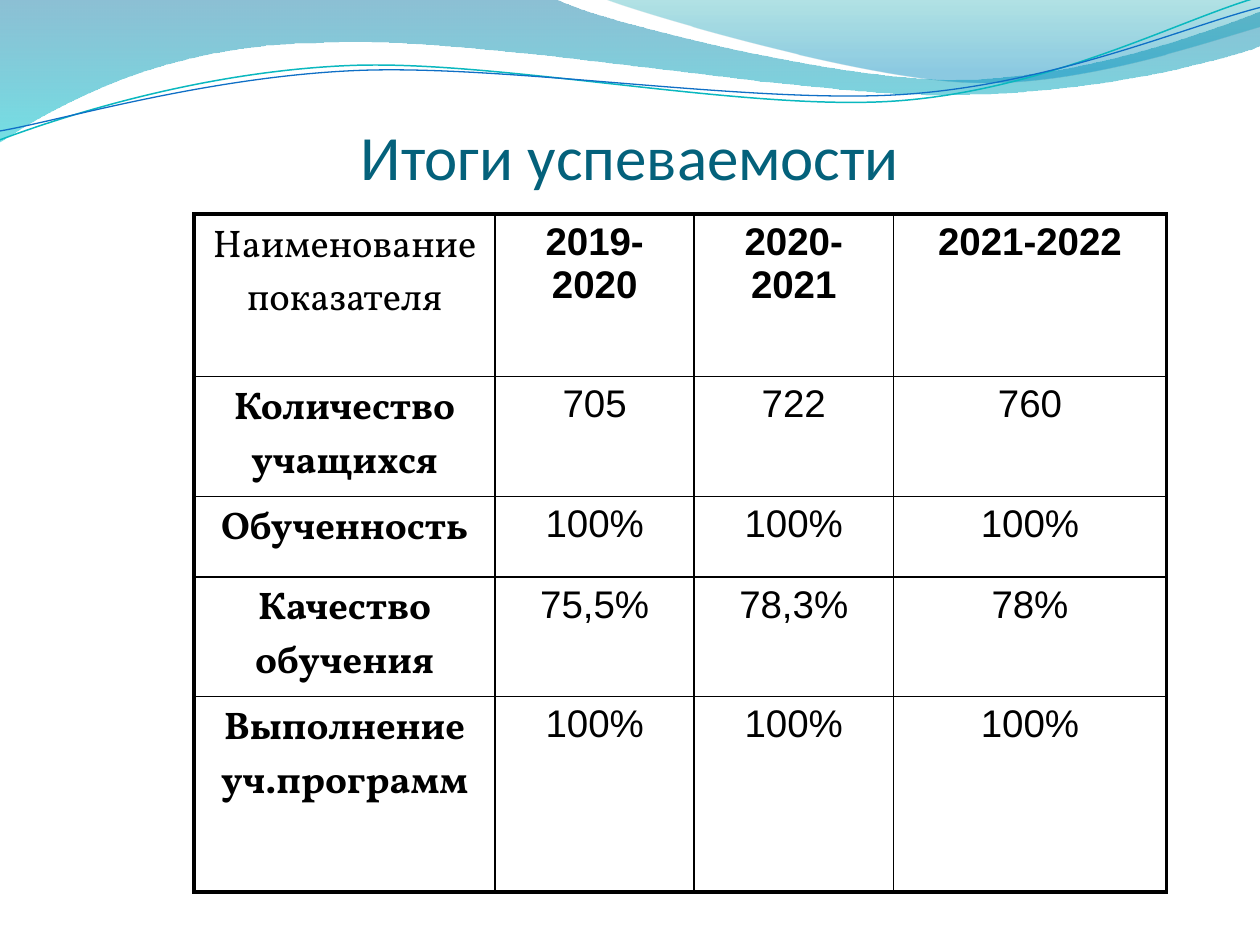
from math import cos, radians, sin

from lxml import etree
from pptx import Presentation
from pptx.dml.color import RGBColor
from pptx.enum.text import MSO_ANCHOR, PP_ALIGN
from pptx.oxml.ns import qn
from pptx.util import Inches, Pt

CENTER = PP_ALIGN.CENTER
BOTTOM = MSO_ANCHOR.BOTTOM
WIDTH, HEIGHT = 10, 7.5
THIN, THICK = 1, 2.25
LINE_TILT = -2.7

# Waves: a start point, then straight steps (one point) or Bezier steps (three)
BACK_WAVE = [
    (0, -0.01), [(4.4, -0.01)],
    [(4.76, 0.17), (6.64, 0.63), (7.58, 0.63)],
    [(8.53, 0.63), (9.58, 0.26), (10, 0.09)],
    [(10.01, 0.36)],
    [(9.83, 0.44), (8.7, 0.76), (7.46, 0.75)],
    [(6.22, 0.75), (3.82, 0.28), (2.57, 0.34)],
    [(1.29, 0.35), (0.46, 0.83), (-0.01, 1.13)],
    [(0, -0.01)],
]
FRONT_WAVE = [
    (4.79, -0.01),
    [(5.09, 0.11), (6.82, 0.62), (7.69, 0.65)],
    [(8.56, 0.69), (9.61, 0.32), (10, 0.21)],
    [(10, 0)], [(4.79, -0.01)],
]
TEAL_LINE = [
    (0, 1.11),
    [(0.48, 0.93), (1.58, 0.57), (2.77, 0.52)],
    [(3.95, 0.47), (5.93, 0.89), (7.13, 0.8)],
    [(8.33, 0.71), (9.38, 0.15), (9.98, -0.02)],
]
BLUE_LINE = [
    (0, 1.04),
    [(0.47, 0.96), (1.64, 0.61), (2.83, 0.56)],
    [(4.03, 0.51), (5.97, 0.83), (7.17, 0.75)],
    [(8.36, 0.67), (9.41, 0.21), (10, 0.06)],
]

COLUMNS = [2.39, 1.58, 1.58, 2.17]
ROWS = [1.29, 0.95, 0.64, 0.95, 1.55]
RESULTS = [
    ["Наименование показателя", "2019-2020", "2020-2021", "2021-2022"],
    ["Количество учащихся", "705", "722", "760"],
    ["Обученность", "100%", "100%", "100%"],
    ["Качество обучения", "75,5%", "78,3%", "78%"],
    ["Выполнение уч.программ", "100%", "100%", "100%"],
]


def color(value):
    return RGBColor.from_string(value)


def style(para, name, size, value, bold=False):
    para.alignment = CENTER
    font = para.font
    font.name, font.size, font.bold = name, Pt(size), bold
    font.color.rgb = color(value)


def turn(point, center, angle):
    x, y = point[0] - center[0], point[1] - center[1]
    c, s = cos(radians(angle)), sin(radians(angle))
    return center[0] + x * c - y * s, center[1] + x * s + y * c


def add_outline(page, outline, close):
    """Draw straight steps through all points, then bend the Bezier steps."""
    start, *steps = outline
    first, *rest = [(Inches(x), Inches(y))
                    for x, y in [start, *(p for step in steps for p in step)]]
    builder = page.shapes.build_freeform(*first)
    builder.add_line_segments(rest, close=close)
    shape = builder.convert_to_shape()
    shape.shadow.inherit = False

    segments = iter(list(shape.element.iter(qn("a:lnTo"))))
    for step in steps:
        parts = [next(segments) for _ in step]
        if len(parts) == 3:
            curve = etree.Element(qn("a:cubicBezTo"))
            parts[0].addprevious(curve)
            for part in parts:
                curve.append(part[0])
                part.getparent().remove(part)
    return shape


def add_wave(page, outline, stops):
    shape = add_outline(page, outline, True)
    shape.line.fill.background()
    shape.fill.gradient()
    shape.fill.gradient_angle = 270
    for stop, (position, value, _) in zip(shape.fill.gradient_stops, stops):
        stop.position = position
        stop.color.rgb = color(value)
    # Opacity of each gradient stop
    tints = shape.element.spPr.iter(qn("a:srgbClr"))
    for tint, (_, _, opacity) in zip(tints, stops):
        etree.SubElement(tint, qn("a:alpha"), val=str(opacity * 1000))


def add_wave_line(page, outline, center, value, width):
    # The line lies level in its box, and the box is tilted
    start, *steps = outline
    level = [turn(start, center, -LINE_TILT)]
    level += [[turn(p, center, -LINE_TILT) for p in step] for step in steps]
    shape = add_outline(page, level, False)
    shape.rotation = LINE_TILT
    shape.fill.background()
    shape.line.color.rgb = color(value)
    shape.line.width = Pt(width)


def add_header(page):
    add_wave(page, BACK_WAVE, [(0, "0074A1", 45), (1, "00C6CF", 55)])
    add_wave(page, FRONT_WAVE, [(0, "00A1A9", 30), (0.8, "008BBF", 45)])
    add_wave_line(page, TEAL_LINE, (4.99, 0.57), "0AB8BF", 0.85)
    add_wave_line(page, BLUE_LINE, (5, 0.59), "0F6FC6", 0.75)


def add_title(page, left, top, width, height):
    box = page.shapes.add_textbox(
        Inches(left), Inches(top), Inches(width), Inches(height))
    frame = box.text_frame
    frame.word_wrap = True
    frame.vertical_anchor = BOTTOM
    frame.margin_bottom = Inches(0.02)
    para = frame.paragraphs[0]
    para.text = "Итоги успеваемости"
    style(para, "Calibri", 36, "04617B")


def add_borders(cell, widths):
    properties = cell._tc.get_or_add_tcPr()
    for side, width in zip("LRTB", widths):
        line = etree.SubElement(properties, qn(f"a:ln{side}"), w=str(Pt(width)))
        fill = etree.SubElement(line, qn("a:solidFill"))
        etree.SubElement(fill, qn("a:srgbClr"), val="000000")


def add_results(page, left, top, width, height):
    table = page.shapes.add_table(
        len(ROWS), len(COLUMNS),
        Inches(left), Inches(top), Inches(width), Inches(height)).table
    table.first_row = table.horz_banding = False
    for column, share in zip(table.columns, COLUMNS):
        column.width = Inches(width * share / sum(COLUMNS))
    for row, share in zip(table.rows, ROWS):
        row.height = Inches(height * share / sum(ROWS))

    last_row, last_column = len(ROWS) - 1, len(COLUMNS) - 1
    for r, texts in enumerate(RESULTS):
        for c, text in enumerate(texts):
            cell = table.cell(r, c)
            # Thick frame outside, thin rules inside
            outer = [c == 0, c == last_column, r == 0, r == last_row]
            add_borders(cell, [THICK if edge else THIN for edge in outer])
            cell.fill.background()
            para = cell.text_frame.paragraphs[0]
            para.text = text
            # Bold for row and column headings, but not for the corner
            style(para, "Arial" if c else "Vollkorn", 22, "000000",
                  bold=(r == 0) != (c == 0))


def main():
    deck = Presentation()
    deck.slide_width, deck.slide_height = Inches(WIDTH), Inches(HEIGHT)
    page = deck.slides.add_slide(deck.slide_layouts[6])
    add_header(page)
    add_title(page, 0.05 * WIDTH, 0.04 * HEIGHT, 0.9 * WIDTH, 1.25 / 7.5 * HEIGHT)
    add_results(page, 1.54, 1.7, sum(COLUMNS), sum(ROWS))
    deck.save("out.pptx")


if __name__ == "__main__":
    main()
